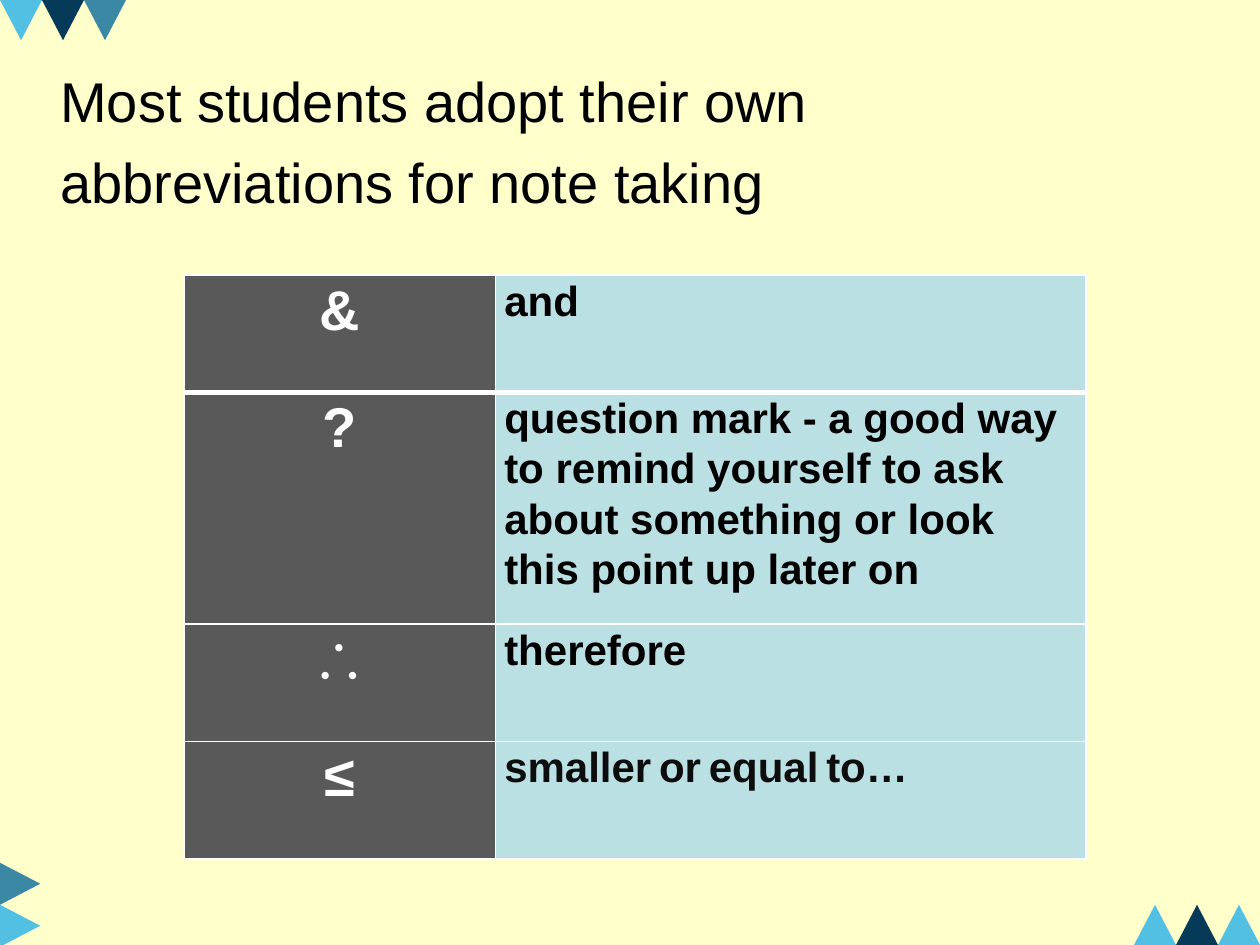
from dataclasses import dataclass

import pptx
import pptx.dml.color
import pptx.enum.shapes
import pptx.enum.text
import pptx.oxml
import pptx.oxml.ns
import pptx.util

Pt = pptx.util.Pt


@dataclass(frozen=True)
class Theme:
    font: str = "Arial"
    background: str = "FFFFCC"
    ink: str = "000000"
    soft_ink: str = "0D0D0D"
    white: str = "FFFFFF"
    symbol_fill: str = "595959"
    meaning_fill: str = "BBE0E3"
    sky: str = "51C0E3"
    navy: str = "063A59"
    steel: str = "3B88A5"
    large: float = 32
    body: float = 24
    small: float = 16


THEME = Theme()
TRIANGLE_WIDTH, TRIANGLE_HEIGHT = 24, 23
ABBREVIATIONS = [
    ("&", [("and", THEME.body)], THEME.ink),
    ("?", [("question mark - a good way to remind yourself to ask about "
            "something or look this point up later on", THEME.body)], THEME.ink),
    ("∴", [("therefore", THEME.body)], THEME.ink),
    ("≤", [("smaller", THEME.body), (" ", THEME.small),
           ("or", THEME.body), (" ", THEME.small),
           ("equal", THEME.body), (" ", THEME.small),
           ("to…", THEME.body)], THEME.soft_ink),
]


def rgb(color):
    return pptx.dml.color.RGBColor.from_string(color)


def paint(fill, color):
    fill.solid()
    fill.fore_color.rgb = rgb(color)


def add_run(paragraph, text, size, color, bold=False):
    run = paragraph.add_run()
    run.text = text
    run.font.name = THEME.font
    run.font.size = Pt(size)
    run.font.bold = bold
    run.font.color.rgb = rgb(color)


def add_triangles(slide, left, top, colors, rotation=0, vertical=False):
    for index, color in enumerate(colors):
        offset = index * TRIANGLE_WIDTH
        triangle = slide.shapes.add_shape(
            pptx.enum.shapes.MSO_SHAPE.ISOSCELES_TRIANGLE,
            Pt(left + (0 if vertical else offset)),
            Pt(top + (offset if vertical else 0)),
            Pt(TRIANGLE_WIDTH), Pt(TRIANGLE_HEIGHT))
        triangle.rotation = rotation
        triangle.shadow.inherit = False
        paint(triangle.fill, color)
        triangle.line.fill.background()


def add_heading(slide, left, top, width, height):
    heading = slide.shapes.add_textbox(Pt(left), Pt(top), Pt(width), Pt(height))
    frame = heading.text_frame
    frame.word_wrap = True
    first = frame.paragraphs[0]
    add_run(first, "Most students adopt their own", THEME.large, THEME.ink)
    second = frame.add_paragraph()
    second.space_before = Pt(7.6)
    add_run(second, "abbreviations for note taking", THEME.large, THEME.ink)


def set_borders(cell, bottom_width):
    properties = cell._tc.get_or_add_tcPr()
    widths = {"lnL": 1, "lnR": 1, "lnT": 1, "lnB": bottom_width}
    for position, (edge, width) in enumerate(widths.items()):
        properties.insert(position, pptx.oxml.parse_xml(
            f'<a:{edge} {pptx.oxml.ns.nsdecls("a")} w="{Pt(width)}">'
            f'<a:solidFill><a:srgbClr val="{THEME.white}"/></a:solidFill>'
            f'</a:{edge}>'))


def fill_cell(cell, runs, color, fill, alignment, bottom_width):
    cell.margin_left = cell.margin_right = Pt(5)
    cell.margin_top = cell.margin_bottom = Pt(0)
    paint(cell.fill, fill)
    set_borders(cell, bottom_width)
    paragraph = cell.text_frame.paragraphs[0]
    paragraph.alignment = alignment
    paragraph.line_spacing = 1.07
    for text, size in runs:
        add_run(paragraph, text, size, color, bold=True)


def add_abbreviations(slide, left, top, width, height):
    table = slide.shapes.add_table(
        len(ABBREVIATIONS), 2, Pt(left), Pt(top), Pt(width), Pt(height)).table
    symbol_width = 178
    table.columns[0].width = Pt(symbol_width)
    table.columns[1].width = Pt(width - symbol_width)
    tall_row = 132.4
    short_row = (height - tall_row) / (len(ABBREVIATIONS) - 1)
    align = pptx.enum.text.PP_ALIGN
    for index, (symbol, meaning, color) in enumerate(ABBREVIATIONS):
        table.rows[index].height = Pt(tall_row if symbol == "?" else short_row)
        bottom_width = 3 if index == 0 else 1
        fill_cell(table.cell(index, 0), [(symbol, THEME.large)], THEME.white,
                  THEME.symbol_fill, align.CENTER, bottom_width)
        fill_cell(table.cell(index, 1), meaning, color,
                  THEME.meaning_fill, align.LEFT, bottom_width)


def main():
    presentation = pptx.Presentation()
    presentation.slide_width, presentation.slide_height = Pt(720), Pt(540)
    slide = presentation.slides.add_slide(presentation.slide_layouts[6])
    paint(slide.background.fill, THEME.background)
    add_triangles(slide, -0.5, 493.5, [THEME.steel, THEME.sky],
                  rotation=90, vertical=True)
    add_triangles(slide, 0, 0, [THEME.sky, THEME.navy, THEME.steel], rotation=180)
    add_triangles(slide, 648, 517, [THEME.sky, THEME.navy, THEME.sky])
    add_heading(slide, 27.4, 34.6, 665, 100)
    add_abbreviations(slide, 105.2, 157.2, 515.4, 333.7)
    presentation.save("out.pptx")


if __name__ == "__main__":
    main()
